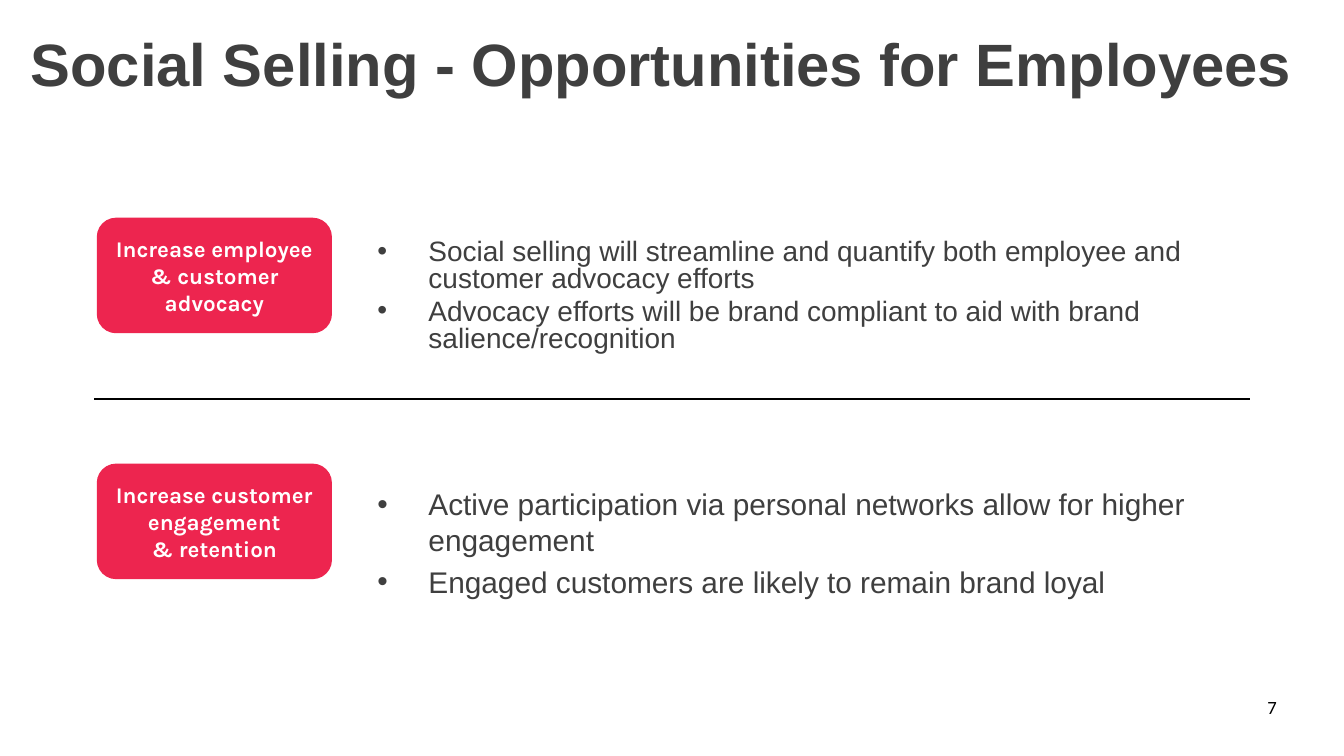
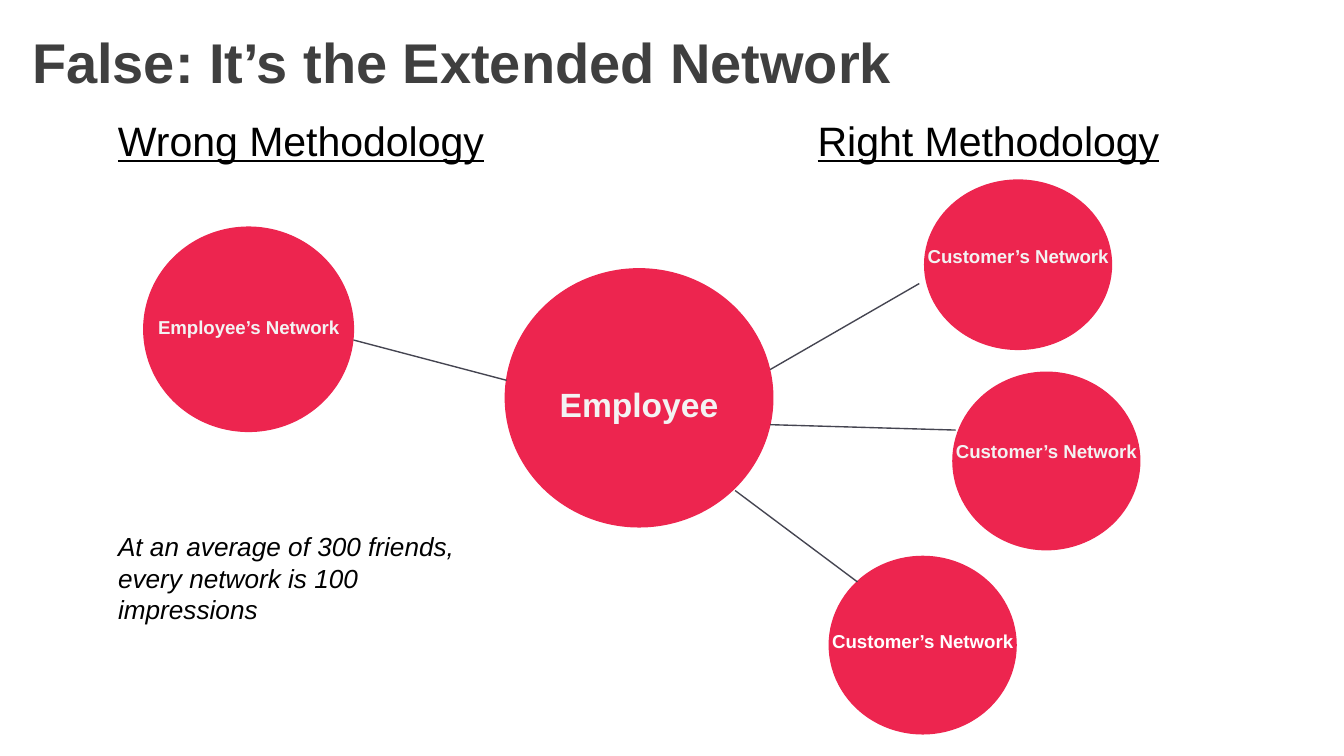
"""Build two slides on social selling: opportunities for employees and the extended network."""
from lxml import etree
from pptx import Presentation
from pptx.dml.color import RGBColor
from pptx.enum.shapes import MSO_CONNECTOR, MSO_SHAPE
from pptx.enum.text import MSO_ANCHOR, PP_ALIGN
from pptx.oxml.ns import qn
from pptx.util import Inches, Pt

OVAL, ROUNDED = MSO_SHAPE.OVAL, MSO_SHAPE.ROUNDED_RECTANGLE
STRAIGHT = MSO_CONNECTOR.STRAIGHT
TOP, MIDDLE, BOTTOM = MSO_ANCHOR.TOP, MSO_ANCHOR.MIDDLE, MSO_ANCHOR.BOTTOM
LEFT, CENTER = PP_ALIGN.LEFT, PP_ALIGN.CENTER

RED = RGBColor(0xED, 0x25, 0x4F)
GREY = RGBColor(0x3F, 0x3F, 0x3F)
SLATE = RGBColor(0x45, 0x45, 0x51)
PALE = RGBColor(0xF3, 0xF3, 0xF3)
WHITE = RGBColor(0xFF, 0xFF, 0xFF)
BLACK = RGBColor(0x00, 0x00, 0x00)


def put_text(sp, lines, size, color, font="Arial", bold=False, align=LEFT,
             anchor=TOP, inset=(0.1, 0.05), spacing=None):
    tf = sp.text_frame
    tf.word_wrap = True
    tf.vertical_anchor = anchor
    tf.margin_left = tf.margin_right = Inches(inset[0])
    tf.margin_top = tf.margin_bottom = Inches(inset[1])
    for i, line in enumerate(lines):
        p = tf.add_paragraph() if i else tf.paragraphs[0]
        p.alignment = align
        if spacing:
            p.line_spacing = spacing
        r = p.add_run()
        r.text = line
        r.font.name = font
        r.font.size = Pt(size)
        r.font.bold = bold
        r.font.color.rgb = color
    return tf.paragraphs


def add_shape(s, kind, box, fill=None, line=None, width=0.75):
    sp = s.shapes.add_shape(kind, *map(Inches, box))
    sp.shadow.inherit = False
    if fill is None:
        sp.fill.background()
    else:
        sp.fill.solid()
        sp.fill.fore_color.rgb = fill
    if line is None:
        sp.line.fill.background()
    else:
        sp.line.color.rgb = line
        sp.line.width = Pt(width)
    return sp


prs = Presentation()
prs.slide_width = Inches(10)
prs.slide_height = prs.slide_width * 9 // 16

titles = [
    ("Social Selling - Opportunities for Employees", (0.13, 0.14, 9.7, 0.65), 32, BOTTOM, 0.9, "7"),
    ("False: It’s the Extended Network", (0.14, 0.23, 10, 0.45), 30, MIDDLE, None, None),
]
slides = []
for title, box, size, anchor, spacing, number in titles:
    s = prs.slides.add_slide(prs.slide_layouts[6])
    slides.append(s)
    sp = s.shapes.add_textbox(*map(Inches, box))
    put_text(sp, [title], size, GREY, bold=True, anchor=anchor, spacing=spacing)
    sp = add_shape(s, OVAL, (9.19, 5.06, 0.55, 0.41), line=WHITE, width=1.5)
    if number:
        put_text(sp, [number], 10, BLACK, "Calibri", align=CENTER, anchor=MIDDLE, inset=(0.01, 0.01))
opportunities, network = slides

goals = [
    (1.62, ["Increase employee & customer advocacy"], (2.71, 1.84, 6.81, 0.74), 15, 0.8, 3,
     ["Social selling will streamline and quantify both employee and customer advocacy efforts",
      "Advocacy efforts will be brand compliant to aid with brand salience/recognition"]),
    (3.45, ["Increase customer engagement", "& retention"], (2.71, 3.76, 7.24, 0.56), 16, None, 3.2,
     ["Active participation via personal networks allow for higher engagement",
      "Engaged customers are likely to remain brand loyal"]),
]
for top, goal, box, size, spacing, before, points in goals:
    sp = add_shape(opportunities, ROUNDED, (0.72, top, 1.75, 0.86), RED)
    put_text(sp, goal, 12, WHITE, "Karla", bold=True, align=CENTER, anchor=MIDDLE)
    sp = opportunities.shapes.add_textbox(*map(Inches, box))
    paragraphs = put_text(sp, points, size, GREY, anchor=MIDDLE, spacing=spacing)
    for p in paragraphs:
        pPr = p._p.get_or_add_pPr()
        pPr.set("marL", str(Inches(0.38)))
        pPr.set("indent", str(Inches(-0.38)))
        color = etree.SubElement(pPr, qn("a:buClr"))
        etree.SubElement(color, qn("a:srgbClr")).set("val", str(GREY))
        etree.SubElement(pPr, qn("a:buFont")).set("typeface", "Arial")
        etree.SubElement(pPr, qn("a:buChar")).set("char", "•")
    paragraphs[1].space_before = Pt(before)

for heading, left, width in [("Wrong Methodology", 0.45, 3.58), ("Right Methodology", 5.63, 3.45)]:
    sp = network.shapes.add_textbox(*map(Inches, (left, 0.81, width, 0.3)))
    put_text(sp, [heading], 22, BLACK, align=CENTER)[0].runs[0].font.underline = True

circles = [
    ("Employee", (3.76, 2, 1.99, 1.92), 2.81, 18, PALE),
    ("Employee’s Network", (1.07, 1.69, 1.56, 1.52), 2.3, 10, PALE),
    ("Customer’s Network", (6.88, 1.34, 1.39, 1.26), 1.77, 10, PALE),
    ("Customer’s Network", (7.09, 2.77, 1.39, 1.32), 3.22, 10, PALE),
    ("Customer’s Network", (6.17, 4.14, 1.39, 1.32), 4.64, 10, WHITE),
]
LABEL_WIDTH = 2.7
for label, box, label_top, size, color in circles:
    add_shape(network, OVAL, box, RED, RED)
    label_left = box[0] + (box[2] - LABEL_WIDTH) / 2
    sp = network.shapes.add_textbox(*map(Inches, (label_left, label_top, LABEL_WIDTH, 0.3)))
    put_text(sp, [label], size, color, bold=True, align=CENTER)

sp = network.shapes.add_textbox(*map(Inches, (0.78, 3.85, 2.91, 1.21)))
note = put_text(sp, ["At an average of 300 friends, every network is 100 impressions"],
                14, BLACK, inset=(0.1, 0.1))
note[0].runs[0].font.italic = True

lines = [
    (opportunities, (0.7, 2.97, 9.3, 2.97), BLACK, 1.25),
    (network, (2.63, 2.53, 3.77, 2.83), SLATE, 0.75),
    (network, (5.73, 2.75, 6.84, 2.11), SLATE, 0.75),
    (network, (5.73, 3.16, 7.11, 3.2), SLATE, 0.75),
    (network, (5.47, 3.65, 6.38, 4.33), SLATE, 0.75),
]
for s, ends, color, width in lines:
    line = s.shapes.add_connector(STRAIGHT, *map(Inches, ends))
    line.line.color.rgb = color
    line.line.width = Pt(width)
    etree.SubElement(line._element.spPr, qn("a:effectLst"))

prs.save("out.pptx")
